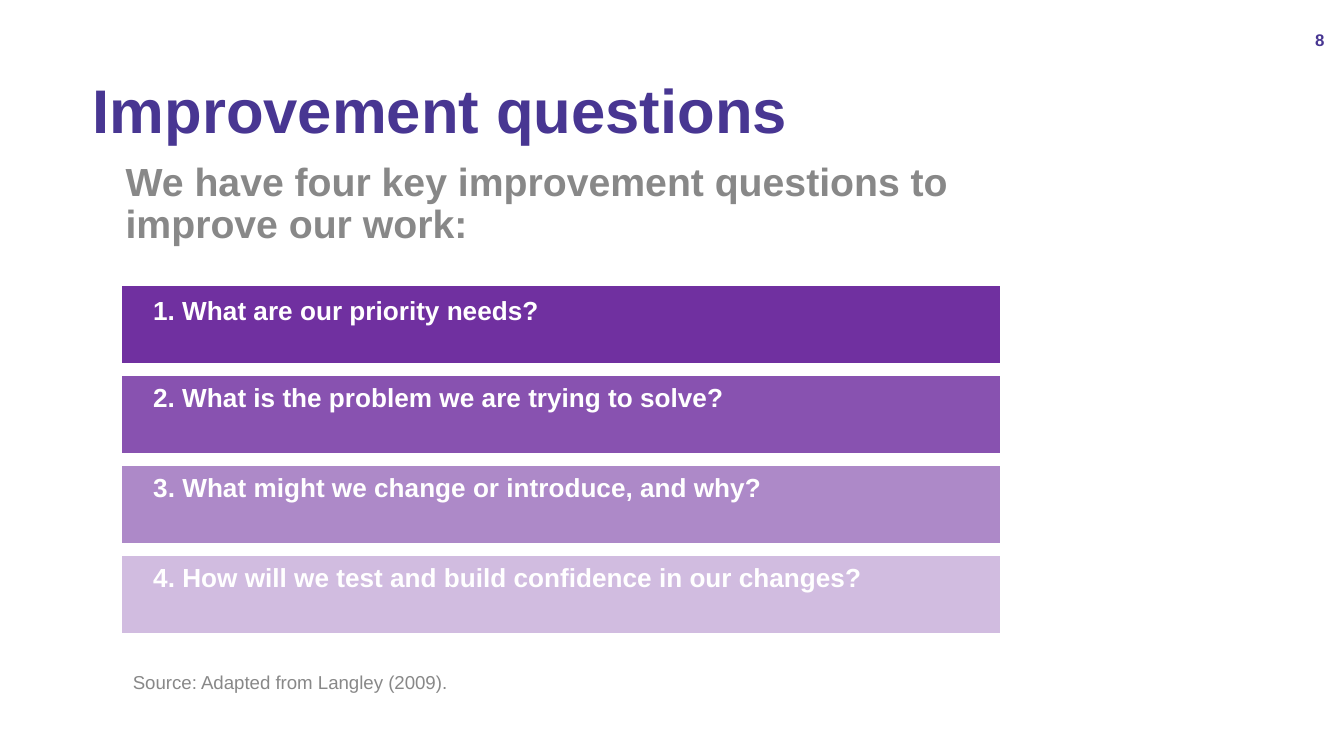
"""Build the improvement questions slide."""
from lxml import etree
from pptx import Presentation
from pptx.dml.color import RGBColor
from pptx.enum.shapes import MSO_SHAPE
from pptx.enum.text import MSO_ANCHOR, MSO_AUTO_SIZE, PP_ALIGN
from pptx.oxml.ns import qn
from pptx.util import Pt

PX = 4572
INDIGO = RGBColor(0x48, 0x36, 0x92)
PURPLE = RGBColor(0x70, 0x30, 0xA0)
GREY = RGBColor(0x88, 0x88, 0x88)
WHITE = RGBColor(0xFF, 0xFF, 0xFF)
RECTANGLE = MSO_SHAPE.RECTANGLE
LEFT, RIGHT = PP_ALIGN.LEFT, PP_ALIGN.RIGHT
TOP, MIDDLE = MSO_ANCHOR.TOP, MSO_ANCHOR.MIDDLE
NO_AUTOFIT = MSO_AUTO_SIZE.NONE


def write(holder, text, size, color, margins, bold=True, align=LEFT, anchor=TOP, spacing=0.9):
    frame = holder.text_frame
    frame.text = text
    frame.word_wrap = True
    frame.auto_size = NO_AUTOFIT
    frame.vertical_anchor = anchor
    frame.margin_left, frame.margin_top, frame.margin_right, frame.margin_bottom = (
        m * PX for m in margins)
    paragraph = frame.paragraphs[0]
    paragraph.alignment = align
    paragraph.line_spacing = spacing
    for run in paragraph.runs:
        run.font.name = "Arial"
        run.font.size = Pt(size)
        run.font.bold = bold
        run.font.color.rgb = color


def add_text(left, top, width, height, *content, **style):
    box = slide.shapes.add_textbox(left * PX, top * PX, width * PX, height * PX)
    write(box, *content, **style)


prs = Presentation()
prs.slide_width, prs.slide_height = 2000 * PX, 1125 * PX
slide = prs.slides.add_slide(prs.slide_layouts[5])

title = slide.shapes.title
title.left, title.top, title.width, title.height = 138 * PX, 60 * PX, 1725 * PX, 217 * PX
write(title, "Improvement questions", 33, INDIGO, (0, 8, 15, 8), anchor=MIDDLE)

add_text(137, 234, 1725, 714, "We have four key improvement questions to \vimprove our work:",
         21, GREY, (50, 8, 15, 8))
add_text(178, 979, 1166, 126, "Source: Adapted from Langley (2009).",
         10, GREY, (20, 20, 20, 20), bold=False, spacing=1)

questions = [
    ("What are our priority needs?", 100, 13, 1028),
    ("What is the problem we are trying to solve?", 83, 8, 1028),
    ("What might we change or introduce, and why?", 57, 8, 1258),
    ("How will we test and build confidence in our changes?", 32, 8, 1238),
]
BAR_TOP, BAR_PITCH = 423, 134
for number, (question, opacity, offset, width) in enumerate(questions, start=1):
    bar_top = BAR_TOP + (number - 1) * BAR_PITCH
    bar = slide.shapes.add_shape(RECTANGLE, 178 * PX, bar_top * PX, 1313 * PX, 120 * PX)
    bar.shadow.inherit = False
    bar.fill.solid()
    bar.fill.fore_color.rgb = PURPLE
    bar.line.color.rgb = WHITE
    bar.line.width = Pt(2)
    if opacity < 100:
        fill_color = bar.fill._xPr.find(qn("a:solidFill"))[0]
        etree.SubElement(fill_color, qn("a:alpha")).set("val", str(opacity * 1000))
    add_text(178, bar_top + offset, width, 86, f"{number}. {question}",
             14, WHITE, (50, 8, 15, 8))

add_text(1902, 30, 84, 60, "8", 9, INDIGO, (15, 8, 15, 8),
         align=RIGHT, anchor=MIDDLE, spacing=1)

prs.save("out.pptx")
